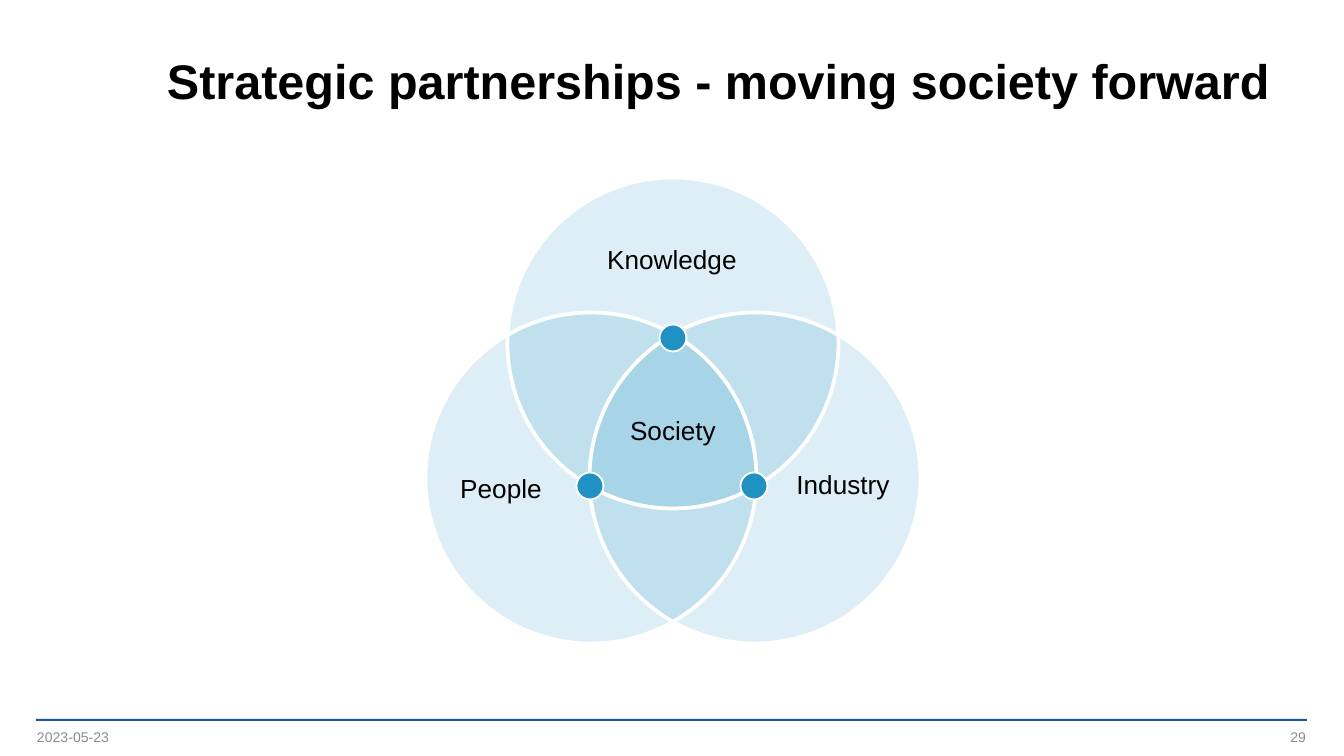
"""Build the slide on strategic partnerships with its three-ring Venn diagram."""
from lxml.etree import SubElement
from pptx import Presentation
from pptx.dml.color import RGBColor as Rgb
from pptx.enum.shapes import MSO_SHAPE as Kind
from pptx.enum.text import MSO_ANCHOR as Anchor, PP_ALIGN as Align
from pptx.oxml.ns import qn
from pptx.util import Pt

PX = 914400 / 134.4
SIZE = (1344, 756)
FONT = "Arial"
COLORS = {"rule": "1954A6", "ring": "2091C3", "edge": "FFFFFF",
          "text": "000000", "foot": "8C8C8C"}

TITLE = ("Strategic partnerships - moving society forward", (167, 36, 1141, 95))
RULE = (36, 719, 1271, 2)
FEET = [("29", 1004, Align.RIGHT), ("2023-05-23", 37, Align.LEFT)]
FOOT_TOP, FOOT_WIDTH, FOOT_HEIGHT = 720, 302, 34
RING, DOT = 331, 27
RINGS = [(673, 343), (591, 478), (755, 478)]
DOTS = [(590, 486), (754, 486), (673, 338)]
LABELS = [("People", 501, 472), ("Industry", 843, 468),
          ("Knowledge", 672, 243), ("Society", 673, 414)]
LABEL_WIDTH, LABEL_HEIGHT = 226, 34


def emu(box):
    return [round(v * PX) for v in box]


def hue(name):
    return Rgb.from_string(COLORS[name])


def add_form(slide, kind, box, fill=None, line=None, alpha=None):
    form = slide.shapes.add_shape(kind, *emu(box))
    form.shadow.inherit = False
    if fill:
        form.fill.solid()
        form.fill.fore_color.rgb = hue(fill)
    else:
        form.fill.background()
    if line:
        form.line.color.rgb = hue("edge")
        form.line.width = Pt(line)
    else:
        form.line.fill.background()
    if alpha:
        color = form.fill._xPr.find(".//" + qn("a:srgbClr"))
        SubElement(color, qn("a:alpha")).set("val", str(alpha * 1000))


def add_disc(slide, mid, size, **style):
    x, y = mid
    box = (x - size / 2, y - size / 2, size, size)
    add_form(slide, Kind.OVAL, box, **style)


def set_text(shape, text, size, color, align, anchor, bold=False):
    frame = shape.text_frame
    frame.margin_left = frame.margin_right = 0
    frame.margin_top = frame.margin_bottom = 0
    frame.word_wrap = True
    frame.vertical_anchor = anchor
    para = frame.paragraphs[0]
    para.text = text
    para.alignment = align
    font = para.font
    font.name, font.size, font.bold = FONT, Pt(size), bold
    font.color.rgb = hue(color)
    return para


def add_text(slide, box, *style):
    set_text(slide.shapes.add_textbox(*emu(box)), *style)


def main():
    deck = Presentation()
    deck.slide_width, deck.slide_height = emu(SIZE)
    slide = deck.slides.add_slide(deck.slide_layouts[5])

    text, box = TITLE
    title = slide.shapes.title
    title.left, title.top, title.width, title.height = emu(box)
    para = set_text(title, text, 26, "text", Align.LEFT, Anchor.MIDDLE, True)
    para.line_spacing = 0.9

    add_form(slide, Kind.RECTANGLE, RULE, fill="rule")
    for text, left, align in FEET:
        box = (left, FOOT_TOP, FOOT_WIDTH, FOOT_HEIGHT)
        add_text(slide, box, text, 7.5, "foot", align, Anchor.MIDDLE)

    for mid in RINGS:
        add_disc(slide, mid, RING, fill="ring", alpha=15)
    for text, mid, top in LABELS:
        box = (mid - LABEL_WIDTH / 2, top, LABEL_WIDTH, LABEL_HEIGHT)
        add_text(slide, box, text, 14, "text", Align.CENTER, Anchor.TOP)
    for mid in RINGS:
        add_disc(slide, mid, RING, line=2)
    for mid in DOTS:
        add_disc(slide, mid, DOT, fill="ring", line=1)

    deck.save("out.pptx")


if __name__ == "__main__":
    main()
